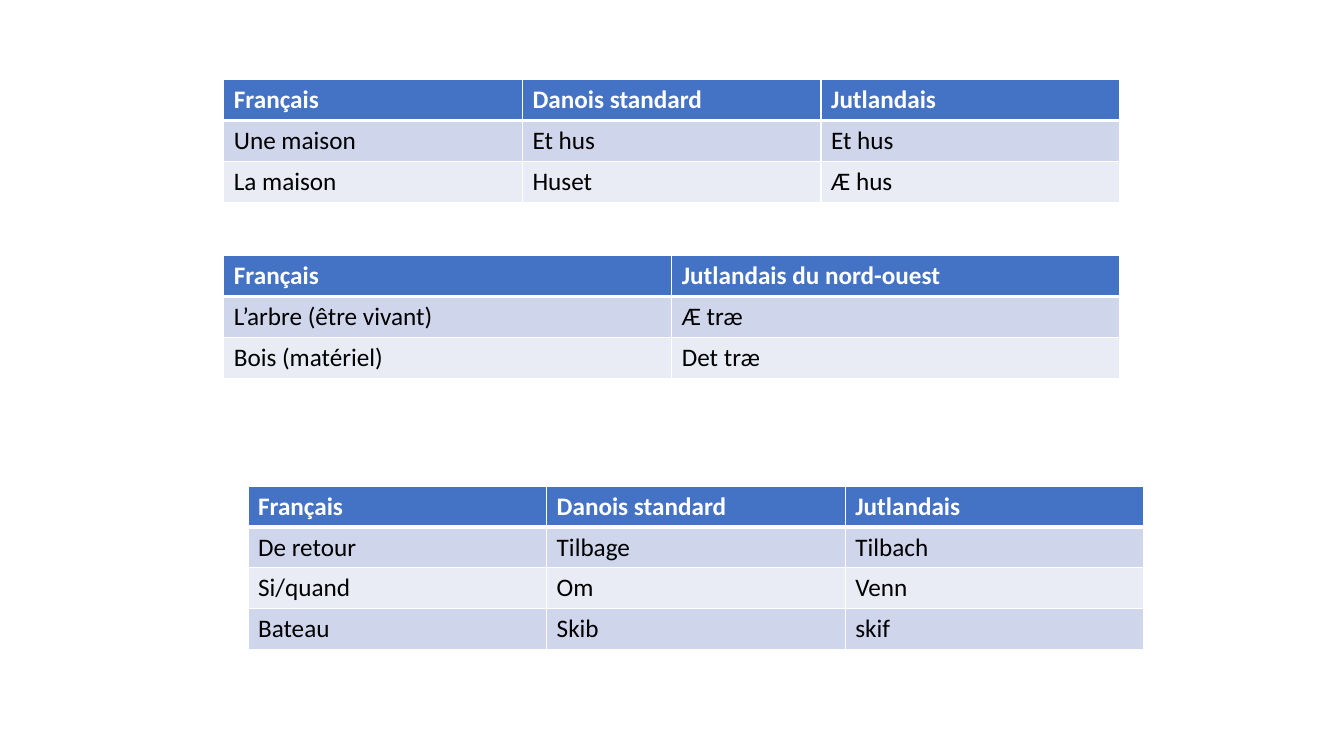
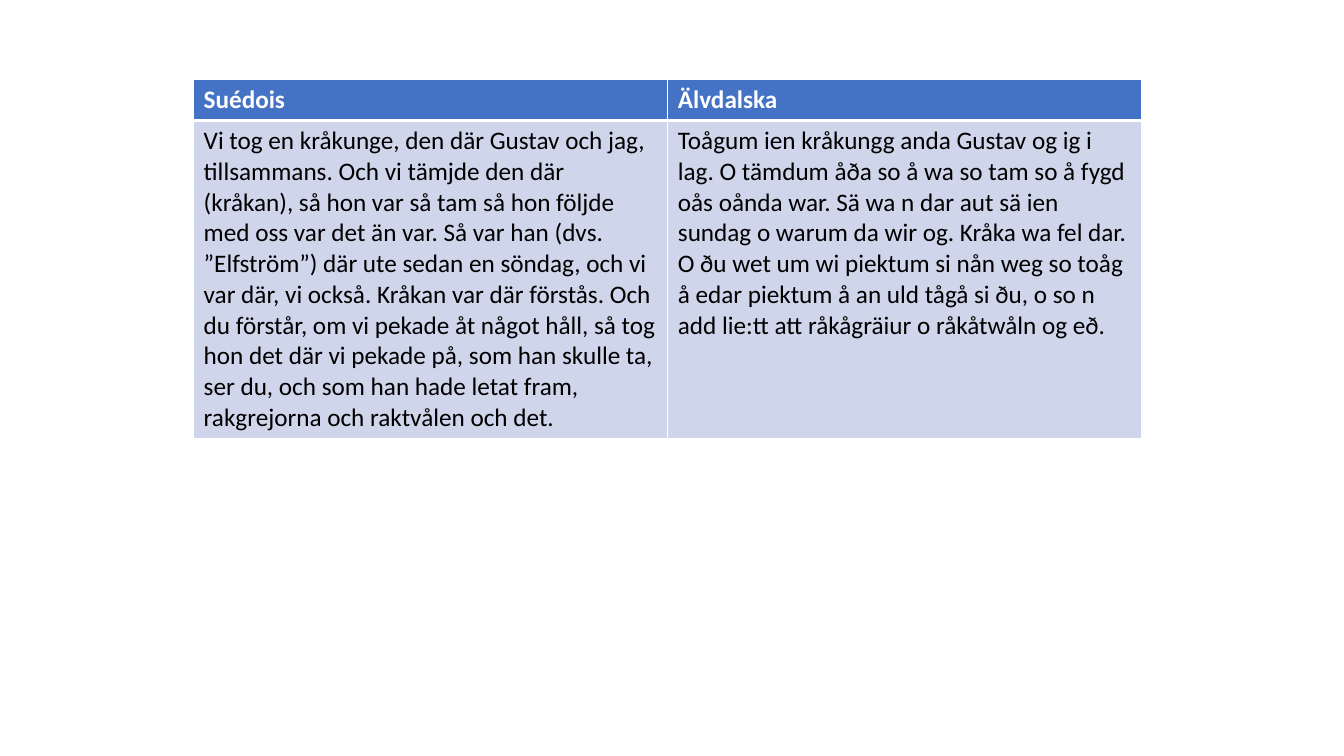
from dataclasses import dataclass

from lxml import etree
from pptx import Presentation
from pptx.dml.color import RGBColor
from pptx.oxml.ns import qn
from pptx.slide import Slide
from pptx.table import _Cell
from pptx.util import Cm, Pt

FONT = "Calibri"
TEXT_SIZE = 18
WHITE = "FFFFFF"
BLACK = "000000"
HEADER_FILL = "4472C4"
BAND_FILLS = ("CFD5EA", "E9EBF5")
THIN, THICK = 1, 3
ROW_HEIGHT = 1.03
TOP = 2.01
BLANK_LAYOUT = 6


@dataclass(frozen=True)
class WordTable:
    """A header row and body rows; lengths are in centimetres."""
    left: float
    top: float
    width: float
    rows: tuple[tuple[str, ...], ...]
    body_height: float = ROW_HEIGHT


WORD_TABLES = (
    WordTable(5.64, TOP, 22.58, (
        ("Français", "Danois standard", "Jutlandais"),
        ("Une maison", "Et hus", "Et hus"),
        ("La maison", "Huset", "Æ hus"),
    )),
    WordTable(5.64, 6.44, 22.58, (
        ("Français", "Jutlandais du nord-ouest"),
        ("L’arbre (être vivant)", "Æ træ"),
        ("Bois (matériel)", "Det træ"),
    )),
    WordTable(6.25, 12.25, 22.58, (
        ("Français", "Danois standard", "Jutlandais"),
        ("De retour", "Tilbage", "Tilbach"),
        ("Si/quand", "Om", "Venn"),
        ("Bateau", "Skib", "skif"),
    )),
)

STORY_TABLE = WordTable(4.88, TOP, 23.9, (
    ("Suédois", "Älvdalska"),
    (
        "Vi tog en kråkunge, den där Gustav och jag, tillsammans. "
        "Och vi tämjde den där (kråkan), så hon var så tam så hon följde "
        "med oss var det än var. Så var han (dvs. ”Elfström”) där ute sedan "
        "en söndag, och vi var där, vi också. Kråkan var där förstås. "
        "Och du förstår, om vi pekade åt något håll, så tog hon det där "
        "vi pekade på, som han skulle ta, ser du, och som han hade letat "
        "fram, rakgrejorna och raktvålen och det.",
        "Toågum ien kråkungg anda Gustav og ig i lag. O tämdum åða so å wa "
        "so tam so å fygd oås oånda war. Sä wa n dar aut sä ien sundag o "
        "warum da wir og. Kråka wa fel dar. O ðu wet um wi piektum si nån "
        "weg so toåg å edar piektum å an uld tågå si ðu, o so n add lie:tt "
        "att råkågräiur o råkåtwåln og eð.",
    ),
), body_height=7.88)

SLIDES = (WORD_TABLES, (STORY_TABLE,))


def rgb(color: str) -> RGBColor:
    return RGBColor.from_string(color)


def write_text(cell: _Cell, text: str, *, color: str = BLACK, bold: bool = False) -> None:
    span = cell.text_frame.paragraphs[0].add_run()
    span.text = text
    span.font.name = FONT
    span.font.size = Pt(TEXT_SIZE)
    span.font.bold = bold
    span.font.color.rgb = rgb(color)


def add_borders(cell: _Cell, *, top: int = THIN, bottom: int = THIN) -> None:
    """Draw white cell borders; call before setting the cell's fill."""
    properties = cell._tc.get_or_add_tcPr()
    for side, width in (("L", THIN), ("R", THIN), ("T", top), ("B", bottom)):
        line = etree.SubElement(properties, qn(f"a:ln{side}"), w=str(Pt(width)))
        fill = etree.SubElement(line, qn("a:solidFill"))
        etree.SubElement(fill, qn("a:srgbClr"), val=WHITE)


def fill_cell(cell: _Cell, color: str) -> None:
    cell.fill.solid()
    cell.fill.fore_color.rgb = rgb(color)


def draw_table(page: Slide, words: WordTable) -> None:
    row_count, column_count = len(words.rows), len(words.rows[0])
    height = ROW_HEIGHT + (row_count - 1) * words.body_height
    table = page.shapes.add_table(
        row_count, column_count,
        Cm(words.left), Cm(words.top), Cm(words.width), Cm(height),
    ).table
    for column in table.columns:
        column.width = Cm(words.width / column_count)
    for row_index, texts in enumerate(words.rows):
        is_header = row_index == 0
        table.rows[row_index].height = Cm(ROW_HEIGHT if is_header else words.body_height)
        for column_index, text in enumerate(texts):
            cell = table.cell(row_index, column_index)
            if is_header:
                add_borders(cell, bottom=THICK)
                fill_cell(cell, HEADER_FILL)
                write_text(cell, text, color=WHITE, bold=True)
            else:
                add_borders(cell, top=THICK if row_index == 1 else THIN)
                fill_cell(cell, BAND_FILLS[(row_index - 1) % len(BAND_FILLS)])
                write_text(cell, text)


def main() -> None:
    deck = Presentation()
    deck.slide_width, deck.slide_height = Cm(33.87), Cm(19.05)
    for tables in SLIDES:
        page = deck.slides.add_slide(deck.slide_layouts[BLANK_LAYOUT])
        for words in tables:
            draw_table(page, words)
    deck.save("out.pptx")


if __name__ == "__main__":
    main()
